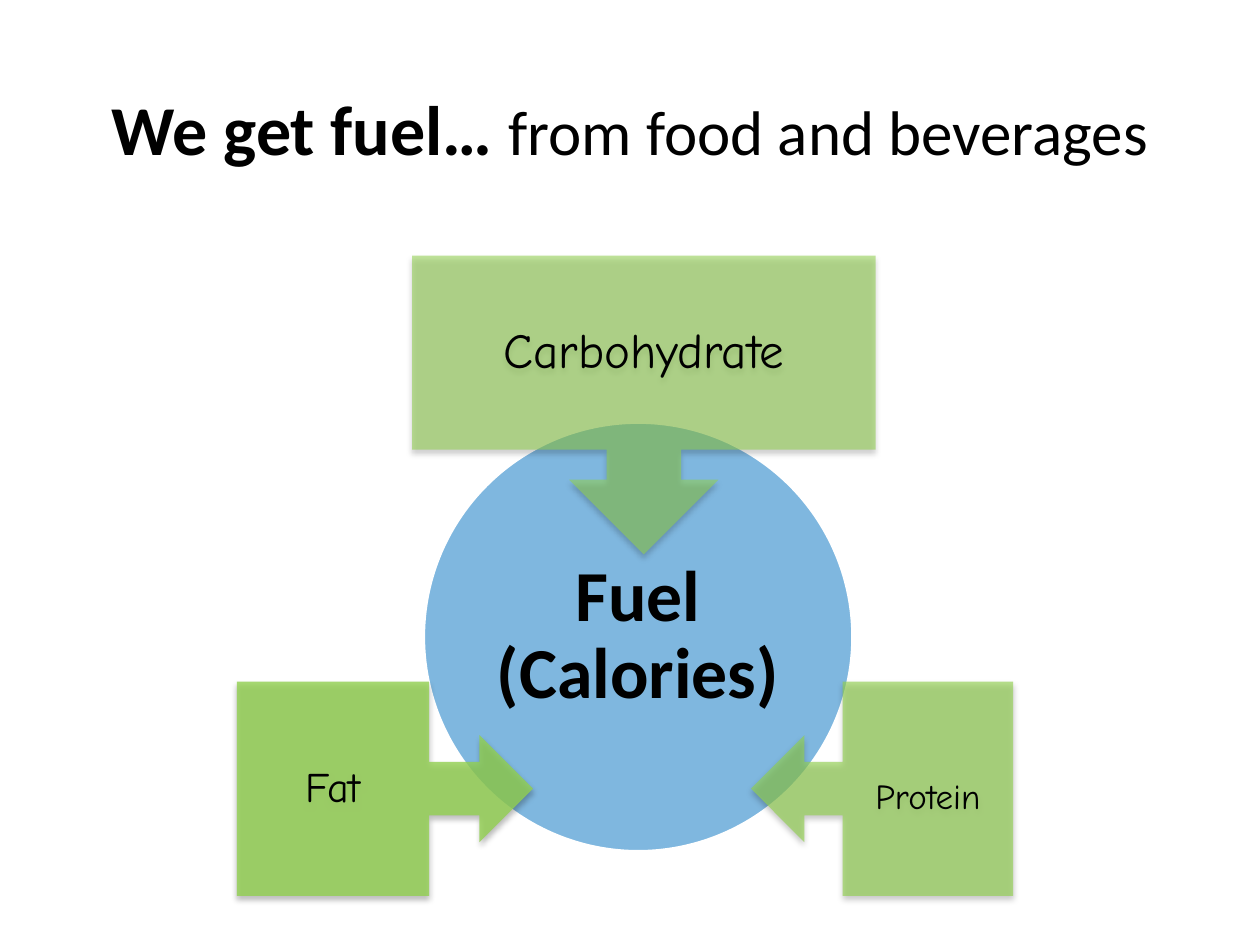
"""Build a slide on the three nutrients that supply the body with fuel."""
import pptx
import pptx.dml.color
import pptx.enum.shapes
import pptx.enum.text
import pptx.oxml
import pptx.oxml.ns
import pptx.util

Inches, Pt = pptx.util.Inches, pptx.util.Pt
SHAPE = pptx.enum.shapes.MSO_SHAPE
COLORS = {"text": "000000", "fuel": "0070C0", "nutrient": "92D050", "outline": "FFFFFF"}


def rgb(name):
    return pptx.dml.color.RGBColor.from_string(COLORS[name])


def set_frame(tf, inset):
    tf.word_wrap = True
    tf.vertical_anchor = pptx.enum.text.MSO_ANCHOR.MIDDLE
    tf.margin_left = tf.margin_right = tf.margin_top = tf.margin_bottom = Inches(inset)


def set_paragraph(p, font):
    p.alignment = pptx.enum.text.PP_ALIGN.CENTER
    p.font.name = font
    p.font.color.rgb = rgb("text")


def add_title(slide, runs):
    tf = slide.shapes.add_textbox(Inches(0.5), Inches(0.3), Inches(9), Inches(1.42)).text_frame
    set_frame(tf, 0.1)
    p = tf.paragraphs[0]
    set_paragraph(p, "Calibri")
    for text, size, bold in runs:
        r = p.add_run()
        r.text = text
        r.font.size = Pt(size)
        r.font.bold = bold


def add_shape(slide, kind, box, color, opacity, text, font, size, inset):
    sp = slide.shapes.add_shape(kind, *map(Inches, box))
    sp.shadow.inherit = False
    sp.fill.solid()
    sp.fill.fore_color.rgb = rgb(color)
    sp.line.fill.background()
    clr = sp.element.spPr.find(".//" + pptx.oxml.ns.qn("a:srgbClr"))
    clr.append(pptx.oxml.parse_xml(
        f'<a:alpha {pptx.oxml.ns.nsdecls("a")} val="{opacity * 1000}"/>'))
    set_frame(sp.text_frame, inset)
    p = sp.text_frame.paragraphs[0]
    p.text = text
    p.line_spacing = 0.9
    set_paragraph(p, font)
    p.font.size = Pt(size)
    return sp


def add_fuel(slide, text):
    sp = add_shape(slide, SHAPE.OVAL, (3.36, 3.35, 3.41, 3.41), "fuel", 50,
                   text, "Calibri", 41, 0.06)
    sp.line.color.rgb = rgb("outline")
    sp.line.width = Pt(2)
    sp.text_frame.paragraphs[0].font.bold = True


def add_nutrient(slide, kind, box, opacity, text, size, drop=0):
    sp = add_shape(slide, kind, box, "nutrient", opacity, text, "Comic Neue", size, 0.03)
    sp.text_frame.margin_top = Inches(0.03 + drop)
    effects = sp.element.spPr.find(pptx.oxml.ns.qn("a:effectLst"))
    effects.append(pptx.oxml.parse_xml(
        f'<a:outerShdw {pptx.oxml.ns.nsdecls("a")} blurRad="{Pt(3.5)}" dist="{Pt(2.2)}" '
        f'dir="5400000" rotWithShape="0"><a:srgbClr val="{COLORS["text"]}">'
        '<a:alpha val="32000"/></a:srgbClr></a:outerShdw>'))


def main():
    prs = pptx.Presentation()
    prs.slide_width, prs.slide_height = Inches(10), Inches(7.5)
    slide = prs.slides.add_slide(prs.slide_layouts[6])
    add_title(slide, [("We get fuel… ", 40, True), ("from food and beverages", 36, False)])
    add_fuel(slide, "Fuel (Calories)")
    add_nutrient(slide, SHAPE.DOWN_ARROW_CALLOUT, (3.27, 2.03, 3.68, 2.37), 57,
                 "Carbohydrate", 28)
    add_nutrient(slide, SHAPE.LEFT_ARROW_CALLOUT, (5.96, 5.41, 2.08, 1.7), 65,
                 "Protein", 20, drop=0.15)
    add_nutrient(slide, SHAPE.RIGHT_ARROW_CALLOUT, (1.88, 5.41, 2.35, 1.7), 80, "Fat", 24)
    prs.save("out.pptx")


if __name__ == "__main__":
    main()
